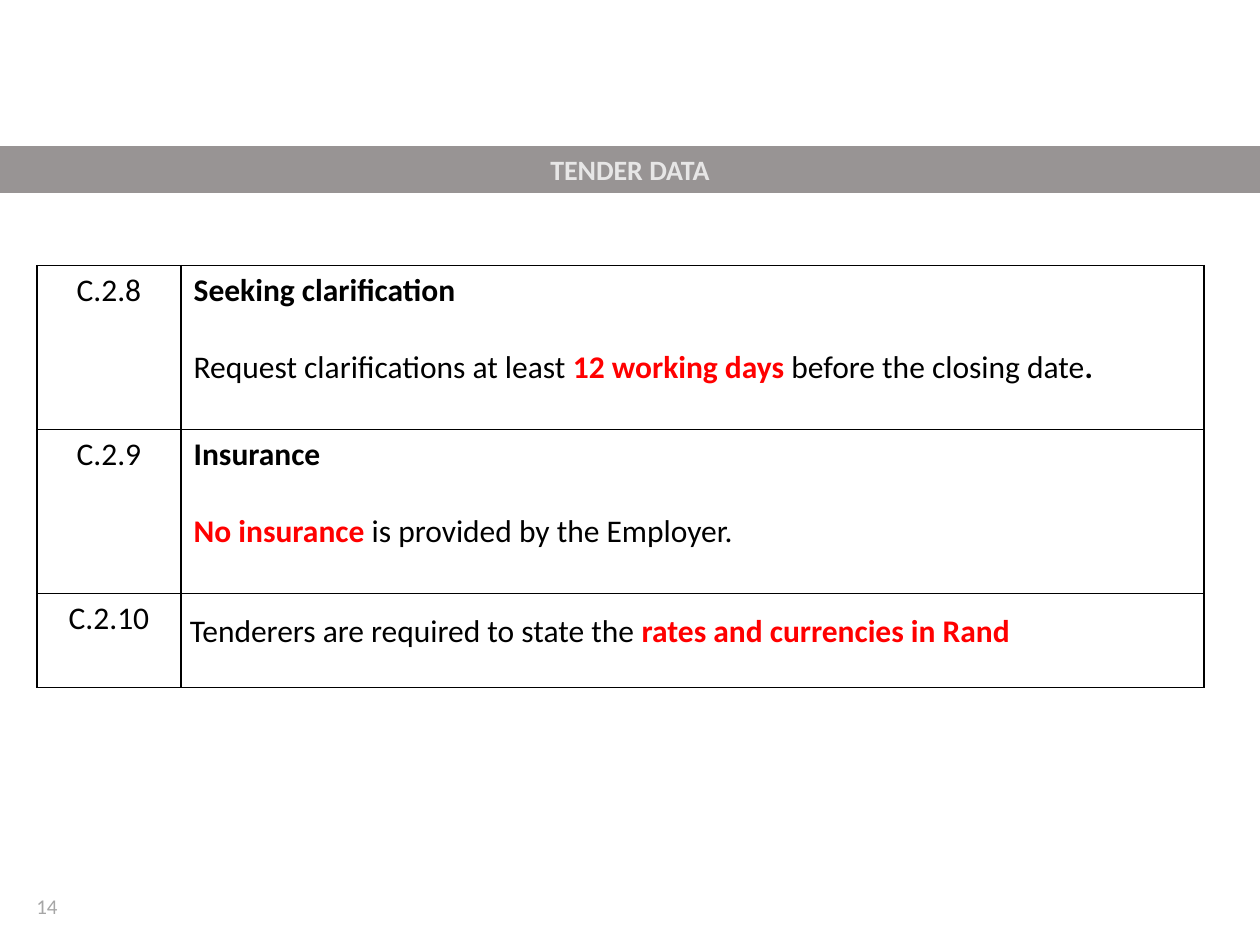
import pptx
import pptx.dml.color
import pptx.enum.shapes
import pptx.enum.text
import pptx.oxml
import pptx.oxml.ns
import pptx.util
from dataclasses import dataclass

Pt = pptx.util.Pt
Align = pptx.enum.text.PP_ALIGN


@dataclass
class Theme:
    font: str = "Calibri"
    ink: str = "000000"
    red: str = "FF0000"
    band: str = "989494"
    pale: str = "E7E6E6"
    grey: str = "A6A6A6"
    body: int = 18
    head: int = 16
    foot: int = 12
    line: int = 1


class Deck:
    def __init__(self, theme):
        self.theme = theme
        self.file = pptx.Presentation()
        self.file.slide_width, self.file.slide_height = Pt(720), Pt(540)
        self.slide = self.file.slides.add_slide(self.file.slide_layouts[6])

    def rgb(self, code):
        return pptx.dml.color.RGBColor.from_string(code)

    def fill_para(self, para, runs, size, align=Align.LEFT):
        """Each run is (text, colour, bold)."""
        para.alignment = align
        for text, color, bold in runs:
            run = para.add_run()
            run.text = text
            font = run.font
            font.name, font.size, font.bold = self.theme.font, Pt(size), bold
            font.color.rgb = self.rgb(color)

    def label(self, box, runs, size):
        frame = self.slide.shapes.add_textbox(*map(Pt, box)).text_frame
        frame.word_wrap = True
        self.fill_para(frame.paragraphs[0], runs, size)

    def banner(self, box, runs, size):
        kind = pptx.enum.shapes.MSO_SHAPE.RECTANGLE
        shape = self.slide.shapes.add_shape(kind, *map(Pt, box))
        shape.shadow.inherit = False
        shape.fill.solid()
        shape.fill.fore_color.rgb = self.rgb(self.theme.band)
        shape.line.fill.background()
        self.fill_para(shape.text_frame.paragraphs[0], runs, size, Align.CENTER)

    def border(self, cell):
        props = cell._tc.get_or_add_tcPr()
        for side in "LRTB":
            props.append(pptx.oxml.parse_xml(
                f'<a:ln{side} {pptx.oxml.ns.nsdecls("a")} w="{Pt(self.theme.line)}">'
                f'<a:solidFill><a:srgbClr val="{self.theme.ink}"/></a:solidFill>'
                f'</a:ln{side}>'))
        cell.fill.background()

    def table(self, left, top, cols, rows):
        grid = self.slide.shapes.add_table(
            len(rows), len(cols), Pt(left), Pt(top), Pt(sum(cols)), Pt(sum(rows))).table
        grid.first_row = grid.horz_banding = False
        for col, width in zip(grid.columns, cols):
            col.width = Pt(width)
        for row, height in zip(grid.rows, rows):
            row.height = Pt(height)
        for cell in grid.iter_cells():
            self.border(cell)
        return grid


def main():
    theme = Theme()
    deck = Deck(theme)
    ink, red, size = theme.ink, theme.red, theme.body

    # Page number and title band
    deck.label((13.7, 506.9, 162, 28.8), [("14", theme.grey, False)], theme.foot)
    deck.banner((0, 83.5, 720, 26.7), [("TENDER DATA", theme.pale, True)], theme.head)

    # Clauses: number, heading, text
    clauses = [
        ("C.2.8", "Seeking clarification", [
            ("Request clarifications at least ", ink, False),
            ("12 working days ", red, True),
            ("before the closing date", ink, False),
            (".", ink, True)]),
        ("C.2.9", "Insurance", [
            ("No insurance ", red, True),
            ("is provided by the Employer.", ink, False)]),
        ("C.2.10", None, [
            ("Tenderers are required to state the ", ink, False),
            ("rates and currencies in Rand", red, True)]),
    ]
    grid = deck.table(21, 151.8, (82.5, 584.5), (93.7, 93.7, 53.7))
    for row, (code, title, runs) in enumerate(clauses):
        deck.fill_para(grid.cell(row, 0).text_frame.paragraphs[0],
                       [(code, ink, False)], size, Align.CENTER)
        cell = grid.cell(row, 1)
        para = cell.text_frame.paragraphs[0]
        if title:
            deck.fill_para(para, [(title, ink, True)], size)
            para = cell.text_frame.add_paragraph()
            para.space_before = Pt(22)
            deck.fill_para(para, runs, size)
        else:
            cell.margin_left = cell.margin_right = Pt(5)
            cell.margin_top = cell.margin_bottom = 0
            para.line_spacing = 1.5
            deck.fill_para(para, runs, size, Align.JUSTIFY)

    deck.file.save("out.pptx")


if __name__ == "__main__":
    main()
